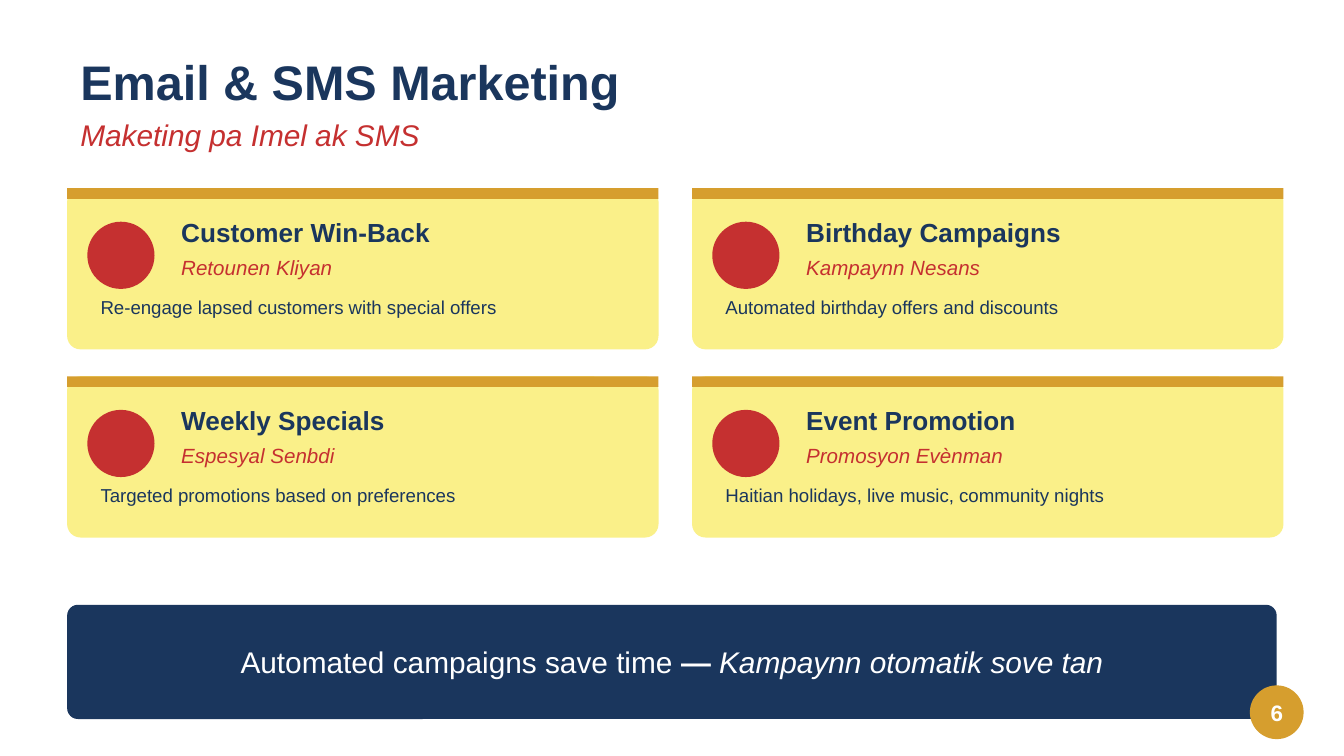
from pptx import Presentation
from pptx.dml.color import RGBColor
from pptx.enum.shapes import MSO_SHAPE as SHAPE
from pptx.enum.text import MSO_ANCHOR as ANCHOR, PP_ALIGN as ALIGN
from pptx.util import Pt

PX = 4572  # EMU per px, 200 px to the inch
FONT = "Arial"
COLORS = {
    "navy": "1A365D",
    "red": "C53030",
    "gold": "D69E2E",
    "cream": "FAF089",
    "white": "FFFFFF",
}
CARDS = [
    ("Customer Win-Back", "Retounen Kliyan",
     "Re-engage lapsed customers with special offers"),
    ("Birthday Campaigns", "Kampaynn Nesans",
     "Automated birthday offers and discounts"),
    ("Weekly Specials", "Espesyal Senbdi",
     "Targeted promotions based on preferences"),
    ("Event Promotion", "Promosyon Evènman",
     "Haitian holidays, live music, community nights"),
]


def rgb(name):
    return RGBColor.from_string(COLORS[name])


def add_shape(s, kind, box, color, radius=None):
    sp = s.shapes.add_shape(kind, *(v * PX for v in box))
    sp.shadow.inherit = False
    sp.fill.solid()
    sp.fill.fore_color.rgb = rgb(color)
    sp.line.fill.background()
    if radius is not None:
        sp.adjustments[0] = radius / min(box[2:])
    return sp


def add_text(s, box, text, size, color, bold=None, italic=None,
             align=ALIGN.LEFT, anchor=ANCHOR.MIDDLE):
    """Add a one-paragraph text box and return its paragraph."""
    tf = s.shapes.add_textbox(*(v * PX for v in box)).text_frame
    tf.word_wrap = True
    tf.vertical_anchor = anchor
    p = tf.paragraphs[0]
    p.text = text
    p.alignment = align
    p.font.name = FONT
    p.font.size = Pt(size)
    p.font.color.rgb = rgb(color)
    p.font.bold = bold
    p.font.italic = italic
    return p


def add_header(s, x, y):
    add_text(s, (x, y, 1200, 120), "Email & SMS Marketing", 26, "navy", bold=True)
    add_text(s, (x, y + 100, 1000, 80), "Maketing pa Imel ak SMS", 16, "red",
             italic=True)


def add_card(s, x, y, w, h, title, subtitle, detail):
    add_shape(s, SHAPE.ROUNDED_RECTANGLE, (x, y, w, h), "cream", radius=20)
    add_shape(s, SHAPE.RECTANGLE, (x, y, w, 16), "gold")
    add_shape(s, SHAPE.OVAL, (x + 30, y + 50, 100, 100), "red")
    add_text(s, (x + 150, y + 30, w - 190, 70), title, 14, "navy", bold=True)
    add_text(s, (x + 150, y + 90, w - 190, 56), subtitle, 11, "red", italic=True)
    add_text(s, (x + 30, y + 150, w - 60, 80), detail, 10, "navy", anchor=ANCHOR.TOP)


def add_card_grid(s, x, y, w, h, gap_x, gap_y):
    for i, card in enumerate(CARDS):
        row, col = divmod(i, 2)
        add_card(s, x + col * (w + gap_x), y + row * (h + gap_y), w, h, *card)


def add_banner(s, box):
    add_shape(s, SHAPE.ROUNDED_RECTANGLE, box, "navy", radius=16)
    p = add_text(s, box, "Automated campaigns save time ", 16, "white",
                 align=ALIGN.CENTER)
    r = p.add_run()
    r.text = "— "
    r.font.bold = True
    r = p.add_run()
    r.text = "Kampaynn otomatik sove tan"
    r.font.italic = True


def add_page_number(s, box, number):
    add_shape(s, SHAPE.OVAL, box, "gold")
    add_text(s, box, str(number), 12, "white", bold=True, align=ALIGN.CENTER)


def main():
    prs = Presentation()
    prs.slide_width, prs.slide_height = 2000 * PX, 1125 * PX
    s = prs.slides.add_slide(prs.slide_layouts[6])
    add_header(s, 100, 60)
    add_card_grid(s, 100, 280, 880, 240, gap_x=50, gap_y=40)
    add_banner(s, (100, 900, 1800, 170))
    add_page_number(s, (1860, 1020, 80, 80), 6)
    prs.save("out.pptx")


if __name__ == "__main__":
    main()
